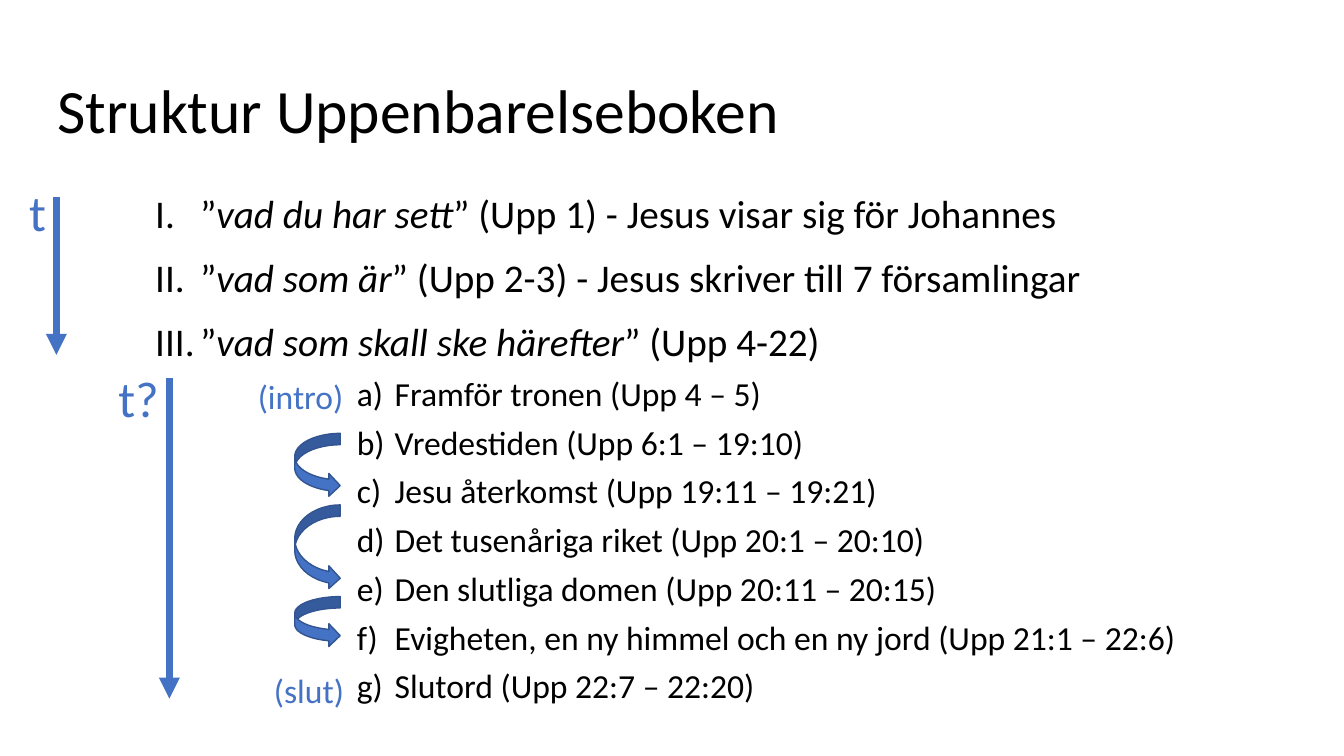
import pptx
import pptx.util
import pptx.dml.color
import pptx.enum.shapes
import pptx.enum.text
import pptx.oxml.ns
from lxml import etree

Pt = pptx.util.Pt
COLORS = {"text": "000000", "accent": "4472C4", "outline": "325491", "background": "FFFFFF"}
FONT = "Calibri"

PARTS = [
    ("vad du har sett", " (Upp 1) - Jesus visar sig för Johannes"),
    ("vad som är", " (Upp 2-3) - Jesus skriver till 7 församlingar"),
    ("vad som skall ske härefter", " (Upp 4-22)"),
]
SECTIONS = [
    "Framför tronen (Upp 4 – 5)",
    "Vredestiden (Upp 6:1 – 19:10)",
    "Jesu återkomst (Upp 19:11 – 19:21)",
    "Det tusenåriga riket (Upp 20:1 – 20:10)",
    "Den slutliga domen (Upp 20:11 – 20:15)",
    "Evigheten, en ny himmel och en ny jord (Upp 21:1 – 22:6)",
    "Slutord (Upp 22:7 – 22:20)",
]


def rgb(name):
    return pptx.dml.color.RGBColor.from_string(COLORS[name])


def add_element(parent, tag, **attributes):
    return etree.SubElement(parent, pptx.oxml.ns.qn(tag), attributes)


def add_text(p, text, size=24, color="text", italic=False):
    r = p.add_run()
    r.text = text
    r.font.name, r.font.size, r.font.italic = FONT, Pt(size), italic
    r.font.color.rgb = rgb(color)


def place(sp, left, top, width, height):
    sp.left, sp.top, sp.width, sp.height = Pt(left), Pt(top), Pt(width), Pt(height)


def number(p, scheme, left, hanging, before):
    p.space_before, p.space_after, p.line_spacing = Pt(before), Pt(0), 1.0
    pPr = p._p.get_or_add_pPr()
    pPr.set("marL", str(Pt(left)))
    pPr.set("indent", str(-Pt(hanging)))
    add_element(pPr, "a:buFont", typeface=FONT)
    add_element(pPr, "a:buAutoNum", type=scheme)


def add_title(slide, left, top, width, height):
    sp = slide.shapes.title
    place(sp, left, top, width, height)
    tf = sp.text_frame
    tf.vertical_anchor = pptx.enum.text.MSO_ANCHOR.MIDDLE
    p = tf.paragraphs[0]
    p.alignment = pptx.enum.text.PP_ALIGN.LEFT
    p.line_spacing = 0.9
    add_text(p, "Struktur Uppenbarelseboken", size=44)


def add_outline(slide, left, top, width, height):
    sp = slide.placeholders[1]
    place(sp, left, top, width, height)
    tf = sp.text_frame
    tf.word_wrap = True
    tf.auto_size = pptx.enum.text.MSO_AUTO_SIZE.SHAPE_TO_FIT_TEXT
    tf.vertical_anchor = pptx.enum.text.MSO_ANCHOR.TOP
    # Main parts, numbered I to III
    for i, (quote, rest) in enumerate(PARTS):
        p = tf.add_paragraph() if i else tf.paragraphs[0]
        number(p, "romanUcPeriod", left=32, hanging=32, before=12)
        add_text(p, "”", size=28)
        add_text(p, quote, size=28, italic=True)
        add_text(p, "”" + rest, size=28)
    # Sections of part III, lettered a to g
    for section in SECTIONS:
        p = tf.add_paragraph()
        p.level = 4
        number(p, "alphaLcParenR", left=171, hanging=27, before=6)
        add_text(p, section)


def add_label(slide, text, right, top, width, height, size):
    sp = slide.shapes.add_textbox(Pt(right - width), Pt(top), Pt(width), Pt(height))
    tf = sp.text_frame
    tf.word_wrap = False
    tf.auto_size = pptx.enum.text.MSO_AUTO_SIZE.SHAPE_TO_FIT_TEXT
    add_text(tf.paragraphs[0], text, size=size, color="accent")


def add_timeline(slide, x, top, bottom, label, label_top, label_width):
    line = slide.shapes.add_connector(
        pptx.enum.shapes.MSO_CONNECTOR.STRAIGHT, Pt(x), Pt(top), Pt(x), Pt(bottom))
    line.line.color.rgb = rgb("accent")
    line.line.width = Pt(5)
    add_element(line.line._get_or_add_ln(), "a:tailEnd", type="triangle")
    add_element(line._element.spPr, "a:effectLst")
    add_label(slide, label, x, label_top, label_width, 51, size=36)


def add_curved_arrows(slide, left, width, spans):
    for top, height in spans:
        sp = slide.shapes.add_shape(
            pptx.enum.shapes.MSO_SHAPE.CURVED_RIGHT_ARROW,
            Pt(left), Pt(top), Pt(width), Pt(height))
        sp.shadow.inherit = False
        sp.fill.solid()
        sp.fill.fore_color.rgb = rgb("accent")
        sp.line.color.rgb = rgb("outline")
        sp.line.width = Pt(1)


def main():
    prs = pptx.Presentation()
    prs.slide_width, prs.slide_height = Pt(960), Pt(540)
    slide = prs.slides.add_slide(prs.slide_layouts[1])
    slide.background.fill.solid()
    slide.background.fill.fore_color.rgb = rgb("background")

    add_outline(slide, 103.7, 131.8, 822, 379.5)
    add_title(slide, 33.8, 28.8, 860.4, 104.4)

    # Time arrows beside the main parts and the sections
    add_timeline(slide, 40.3, 141, 253.5, "t", label_top=126, label_width=26.6)
    add_timeline(slide, 121, 270, 499, "t?", label_top=259, label_width=43.5)

    # Notes beside the first and last section
    add_label(slide, "(intro)", 253.4, 265, 76.3, 36, size=24)
    add_label(slide, "(slut)", 253.4, 475.2, 64.8, 36, size=24)

    # Links between successive sections
    add_curved_arrows(slide, 210.5, 32.5, [(309.6, 45.4), (360.7, 60.5), (426.2, 36)])

    prs.save("out.pptx")


if __name__ == "__main__":
    main()
